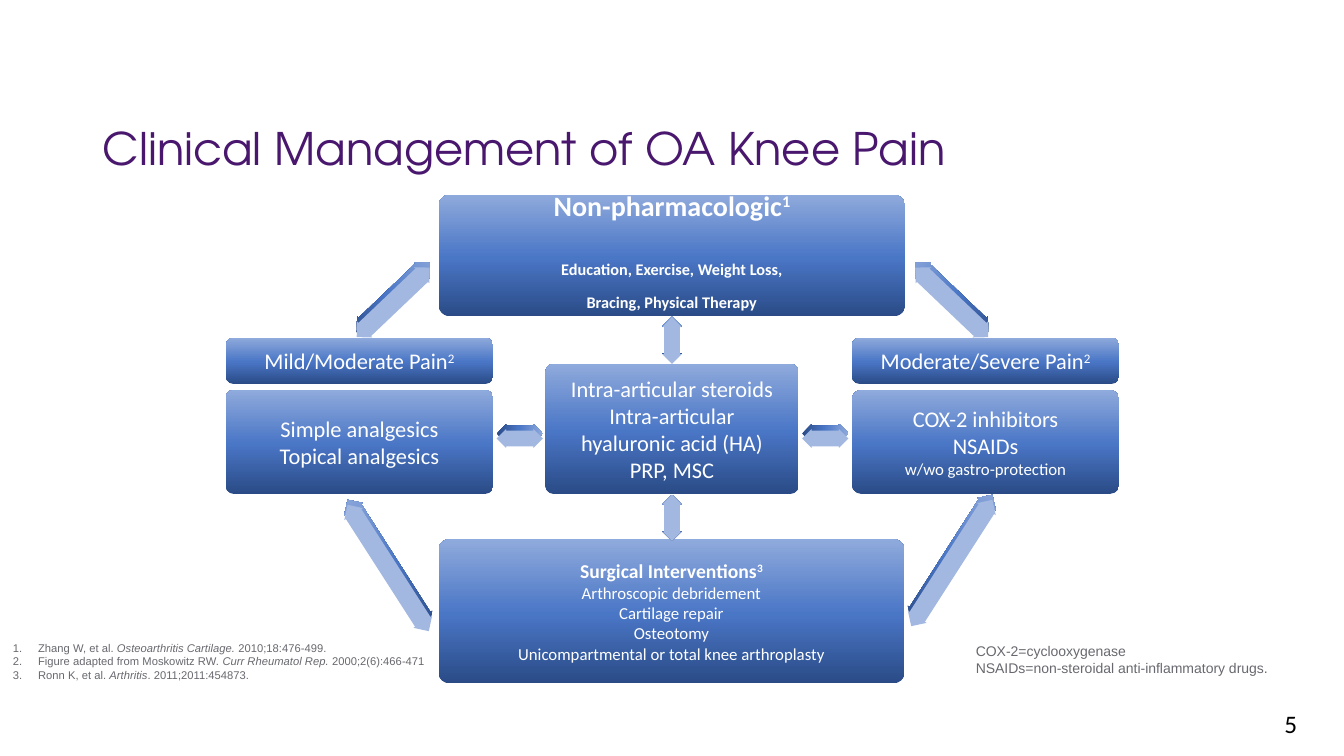
from copy import deepcopy
from dataclasses import dataclass

from lxml.etree import SubElement
from pptx import Presentation
from pptx.dml.color import RGBColor
from pptx.enum.shapes import MSO_SHAPE
from pptx.enum.text import MSO_ANCHOR, PP_ALIGN
from pptx.oxml.ns import qn
from pptx.util import Inches, Pt


@dataclass(frozen=True)
class Theme:
    title: str = "49176D"
    card_text: str = "FFFFFF"
    note_text: str = "68696F"
    page_text: str = "000000"
    arrow_face: str = "A2B8E1"
    gradient: tuple = ((0, "2A4B86"), (0.48, "4A76C6"), (1, "8FAADC"))
    title_font: str = "TeX Gyre Adventor"
    card_font: str = "Calibri"
    note_font: str = "Arial"
    title_size: float = 32
    heading_size: float = 20
    page_size: float = 18
    body_size: float = 16
    subheading_size: float = 14
    detail_size: float = 12
    abbreviation_size: float = 10
    reference_size: float = 8


THEME = Theme()


@dataclass(frozen=True)
class Span:
    text: str
    raised: bool = False
    italic: bool = False


@dataclass(frozen=True)
class Line:
    spans: tuple
    size: float = THEME.body_size
    bold: bool = False
    gap: float = 0
    spacing: float = 1
    numbered: bool = False


@dataclass(frozen=True)
class Box:
    left: float
    top: float
    width: float
    height: float


@dataclass(frozen=True)
class Card:
    box: Box
    rounding: float
    lines: tuple


@dataclass(frozen=True)
class Arrow:
    box: Box
    rotation: float = 0
    face_drop: float = 0.05


@dataclass(frozen=True)
class Note:
    box: Box
    lines: tuple
    font: str
    color: str
    anchor: MSO_ANCHOR = MSO_ANCHOR.TOP
    wrap: bool = True


def plain(*texts: str, size: float = THEME.body_size) -> tuple:
    return tuple(Line((Span(text),), size) for text in texts)


def cited(text: str, mark: str, size: float = THEME.body_size, bold: bool = False) -> Line:
    return Line((Span(text), Span(mark, raised=True)), size, bold)


def reference(authors: str, journal: str, issue: str) -> Line:
    return Line((Span(authors), Span(journal, italic=True), Span(issue)),
                THEME.reference_size, numbered=True)


# Cards, from back to front
SURGICAL = Card(Box(4.35, 5.35, 4.62, 1.43), 0.076, (
    cited("Surgical Interventions", "3", THEME.subheading_size, True),
    *plain("Arthroscopic debridement", "Cartilage repair", "Osteotomy",
           "Unicompartmental or total knee arthroplasty", size=THEME.detail_size)))
NON_PHARMACOLOGIC = Card(Box(4.35, 1.93, 4.63, 1.21), 0.099, (
    cited("Non-pharmacologic", "1", THEME.heading_size, True),
    Line((Span("Education, Exercise, Weight Loss,", raised=True),),
         THEME.heading_size, True, gap=24.4),
    Line((Span("Bracing, Physical Therapy", raised=True),), THEME.heading_size, True)))
INTRA_ARTICULAR = Card(Box(5.41, 3.61, 2.51, 1.29), 0.061, plain(
    "Intra-articular steroids", "Intra-articular\nhyaluronic acid (HA)", "PRP, MSC"))
SEVERE_LABEL = Card(Box(8.45, 3.35, 2.65, 0.46), 0.167,
                    (cited("Moderate/Severe Pain", "2"),))
SEVERE = Card(Box(8.45, 3.87, 2.65, 1.03), 0.087, (
    *plain("COX-2 inhibitors", "NSAIDs"),
    *plain("w/wo gastro-protection", size=THEME.detail_size)))
MILD_LABEL = Card(Box(2.24, 3.35, 2.65, 0.46), 0.167, (cited("Mild/Moderate Pain", "2"),))
MILD = Card(Box(2.24, 3.87, 2.65, 1.03), 0.074,
            plain("Simple analgesics", "Topical analgesics"))
CARDS = (SURGICAL, NON_PHARMACOLOGIC, INTRA_ARTICULAR,
         SEVERE_LABEL, SEVERE, MILD_LABEL, MILD)

ARROWS = (
    Arrow(Box(9.33, 4.79, 0.22, 1.49), 32.7),
    Arrow(Box(6.57, 4.91, 0.19, 0.46), face_drop=0),
    Arrow(Box(5.06, 4.07, 0.19, 0.46), 90),
    Arrow(Box(8.09, 4.07, 0.19, 0.46), 90),
    Arrow(Box(6.57, 3.14, 0.19, 0.46), face_drop=0.01),
    Arrow(Box(3.74, 4.84, 0.22, 1.49), 327.3),
    Arrow(Box(9.33, 2.45, 0.22, 1), 313.6),
    Arrow(Box(3.79, 2.45, 0.22, 1), 46.4),
)

NOTES = (
    Note(Box(12.64, 6.98, 0.5, 0.4), plain("5", size=THEME.page_size),
         THEME.card_font, THEME.page_text, wrap=False),
    Note(Box(0.92, 0.99, 11.5, 1.01),
         (Line((Span("Clinical Management of OA Knee Pain"),), THEME.title_size, spacing=0.9),),
         THEME.title_font, THEME.title, MSO_ANCHOR.MIDDLE),
    Note(Box(0.03, 6.27, 4.32, 0.54), (
        reference("Zhang W, et al. ", "Osteoarthritis Cartilage. ", "2010;18:476-499."),
        reference("Figure adapted from Moskowitz RW. ", "Curr Rheumatol Rep. ",
                  "2000;2(6):466-471"),
        reference("Ronn K, et al. ", "Arthritis", ". 2011;2011:454873.")),
         THEME.note_font, THEME.note_text, MSO_ANCHOR.BOTTOM),
    Note(Box(9.58, 6.32, 3.4, 0.44),
         plain("COX-2=cyclooxygenase", "NSAIDs=non-steroidal anti-inflammatory drugs.",
               size=THEME.abbreviation_size),
         THEME.note_font, THEME.note_text, MSO_ANCHOR.BOTTOM),
)


def place(box: Box, drop: float = 0) -> tuple:
    return tuple(Inches(n) for n in (box.left, box.top + drop, box.width, box.height))


def write(frame, lines: tuple, font: str, color: str, align: PP_ALIGN) -> None:
    for index, line in enumerate(lines):
        paragraph = frame.add_paragraph() if index else frame.paragraphs[0]
        paragraph.alignment = align
        paragraph.line_spacing = line.spacing
        if line.gap:
            paragraph.space_before = Pt(line.gap)
        if line.numbered:
            properties = paragraph._p.get_or_add_pPr()
            properties.set("marL", str(Inches(0.25)))
            properties.set("indent", str(-Inches(0.25)))
            SubElement(properties, qn("a:buAutoNum"), type="arabicPeriod")
        paragraph.font.name = font
        paragraph.font.size = Pt(line.size)
        paragraph.font.bold = line.bold
        paragraph.font.color.rgb = RGBColor.from_string(color)
        for span in line.spans:
            for row, text in enumerate(span.text.split("\n")):
                if row:
                    paragraph.add_line_break()
                run = paragraph.add_run()
                run.text = text
                if span.italic:
                    run.font.italic = True
                if span.raised:
                    run._r.get_or_add_rPr().set("baseline", "30000")


def shade(shape) -> None:
    """Blend from dark at the bottom to light at the top."""
    shape.fill.gradient()
    shape.fill.gradient_angle = 90
    stops = shape._element.spPr.find(".//" + qn("a:gsLst"))
    stops.append(deepcopy(stops[-1]))
    for stop, (position, color) in zip(shape.fill.gradient_stops, THEME.gradient):
        stop.position = position
        stop.color.rgb = RGBColor.from_string(color)


def add_outline_free(slide, kind: MSO_SHAPE, box: Box, drop: float = 0):
    shape = slide.shapes.add_shape(kind, *place(box, drop))
    shape.shadow.inherit = False
    shape.line.fill.background()
    return shape


def draw_card(slide, card: Card) -> None:
    shape = add_outline_free(slide, MSO_SHAPE.ROUNDED_RECTANGLE, card.box)
    shape.adjustments[0] = card.rounding
    shade(shape)
    shape.text_frame.word_wrap = True
    shape.text_frame.vertical_anchor = MSO_ANCHOR.MIDDLE
    write(shape.text_frame, card.lines, THEME.card_font, THEME.card_text, PP_ALIGN.CENTER)


def draw_arrow(slide, arrow: Arrow, face: bool) -> None:
    drop = arrow.face_drop if face else 0
    shape = add_outline_free(slide, MSO_SHAPE.UP_DOWN_ARROW, arrow.box, drop)
    shape.adjustments[0], shape.adjustments[1] = 0.532, 0.823
    shape.rotation = arrow.rotation
    if face:
        shape.fill.solid()
        shape.fill.fore_color.rgb = RGBColor.from_string(THEME.arrow_face)
    else:
        shade(shape)


def draw_note(slide, note: Note) -> None:
    frame = slide.shapes.add_textbox(*place(note.box)).text_frame
    frame.word_wrap = note.wrap
    frame.vertical_anchor = note.anchor
    write(frame, note.lines, note.font, note.color, PP_ALIGN.LEFT)


def main() -> None:
    deck = Presentation()
    deck.slide_width, deck.slide_height = Inches(13.33), Inches(7.5)
    slide = deck.slides.add_slide(deck.slide_layouts[6])
    for card in CARDS:
        draw_card(slide, card)
    # Shaded arrows first, then their light faces
    for face in (False, True):
        for arrow in ARROWS:
            draw_arrow(slide, arrow, face)
    # Title, page number, references and abbreviations
    for note in NOTES:
        draw_note(slide, note)
    deck.save("out.pptx")


if __name__ == "__main__":
    main()
